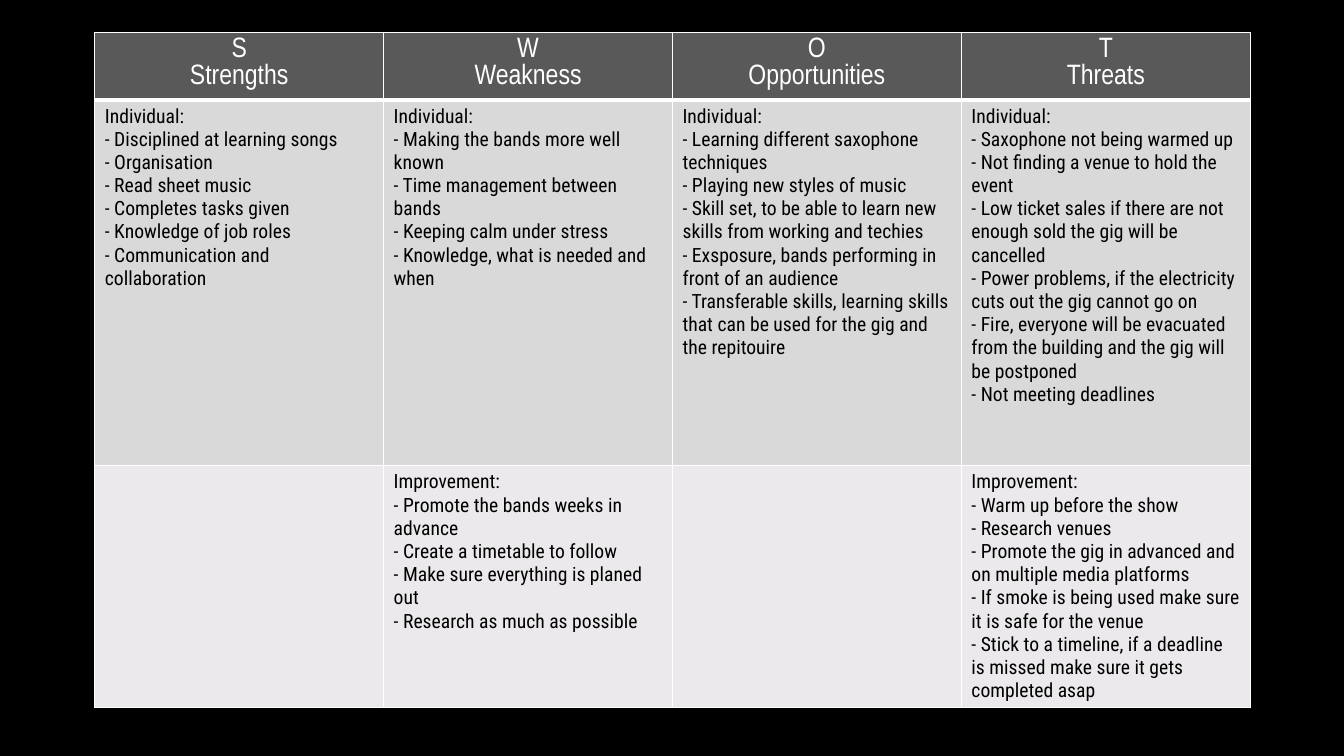
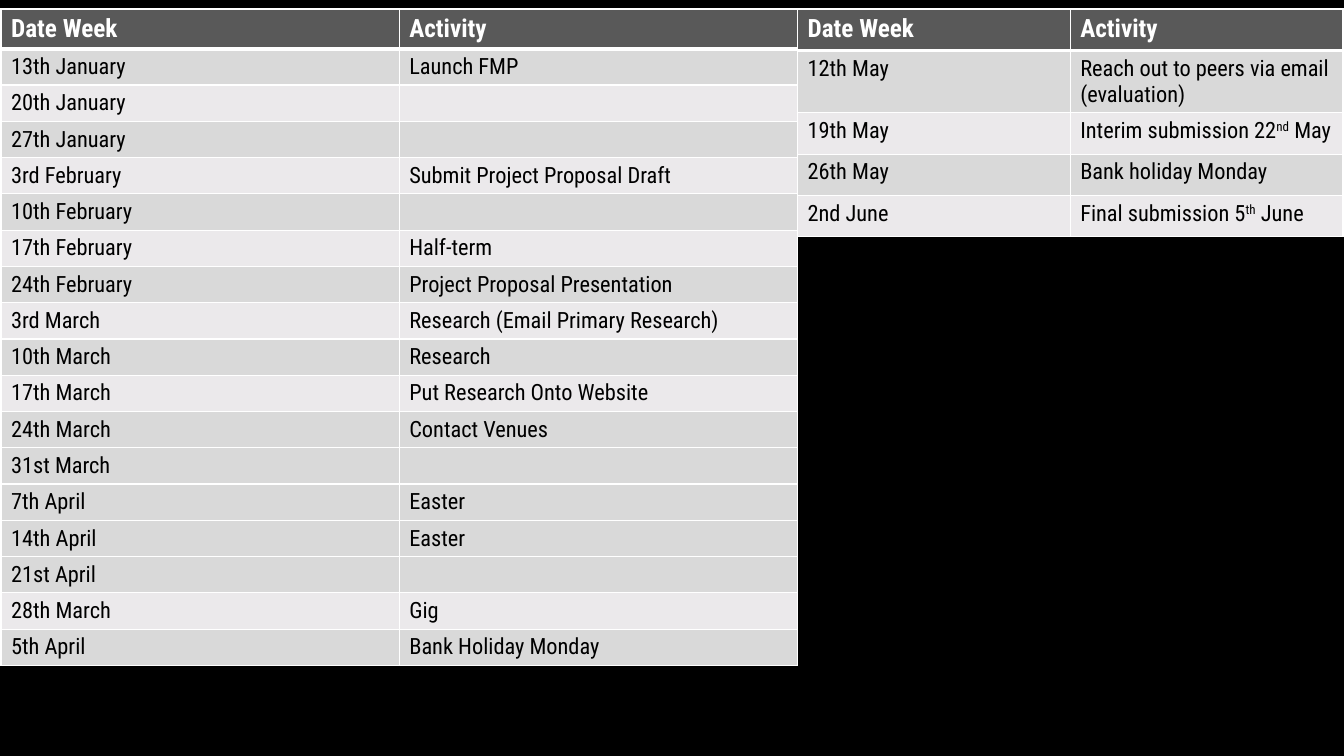
from lxml import etree
from pptx import Presentation
from pptx.dml.color import RGBColor
from pptx.enum import shapes, text
from pptx.oxml import ns
from pptx.util import Inches, Pt

BLACK = RGBColor(0x00, 0x00, 0x00)
WHITE = RGBColor(0xFF, 0xFF, 0xFF)
HEAD = RGBColor(0x59, 0x59, 0x59)
DARK = RGBColor(0xD9, 0xD9, 0xD9)
LIGHT = RGBColor(0xEB, 0xE9, 0xEB)
FONT = "Roboto Condensed"
NARROW = "Arial Narrow"
GRID = "{5940675A-B579-460E-94D1-54222C63F5DA}"
WIDE, HIGH = 13.33, 7.5

SWOT = [
    ["S\nStrengths", "W\nWeakness", "O\nOpportunities", "T\nThreats"],
    [
        """Individual:
- Disciplined at learning songs
- Organisation
- Read sheet music
- Completes tasks given
- Knowledge of job roles
- Communication and collaboration""",
        """Individual:
- Making the bands more well known
- Time management between bands
- Keeping calm under stress
- Knowledge, what is needed and when""",
        """Individual:
- Learning different saxophone techniques
- Playing new styles of music
- Skill set, to be able to learn new skills from working and techies
- Exsposure, bands performing in front of an audience
- Transferable skills, learning skills that can be used for the gig and the repitouire""",
        """Individual:
- Saxophone not being warmed up
- Not finding a venue to hold the event
- Low ticket sales if there are not enough sold the gig will be cancelled
- Power problems, if the electricity cuts out the gig cannot go on
- Fire, everyone will be evacuated from the building and the gig will be postponed
- Not meeting deadlines""",
    ],
    [
        "",
        """Improvement:
- Promote the bands weeks in advance
- Create a timetable to follow
- Make sure everything is planed out
- Research as much as possible""",
        "",
        """Improvement:
- Warm up before the show
- Research venues
- Promote the gig in advanced and on multiple media platforms
- If smoke is being used make sure it is safe for the venue
- Stick to a timeline, if a deadline is missed make sure it gets completed asap""",
    ],
]

TITLES = ["Date Week", "Activity"]
SPRING = [
    TITLES,
    ["13th January", "Launch FMP"],
    ["20th January", ""],
    ["27th January", ""],
    ["3rd February", "Submit Project Proposal Draft"],
    ["10th February", ""],
    ["17th February", "Half-term"],
    ["24th February", "Project Proposal Presentation"],
    ["3rd March", "Research (Email Primary Research)"],
    ["10th March", "Research"],
    ["17th March", "Put Research Onto Website"],
    ["24th March", "Contact Venues"],
    ["31st March", ""],
    ["7th April", "Easter"],
    ["14th April", "Easter"],
    ["21st April", ""],
    ["28th March", "Gig"],
    ["5th April", "Bank Holiday Monday"],
]
SUMMER = [
    TITLES,
    ["12th May", "Reach out to peers via email (evaluation)"],
    ["19th May", "Interim submission 22^nd^ May"],
    ["26th May", "Bank holiday Monday"],
    ["2nd June", "Final submission 5^th^ June"],
]


def add_page(prs):
    """Add a blank slide covered by the black backdrop."""
    slide = prs.slides.add_slide(prs.slide_layouts[6])
    back = slide.shapes.add_shape(shapes.MSO_SHAPE.RECTANGLE, 0, 0,
                                  prs.slide_width, prs.slide_height)
    back.shadow.inherit = False
    back.fill.solid()
    back.fill.fore_color.rgb = BLACK
    back.line.fill.background()
    return slide


def set_edges(cell, top, base):
    """Draw white cell borders, with top and base widths in points."""
    props = cell._tc.get_or_add_tcPr()
    widths = {"a:lnL": 1, "a:lnR": 1, "a:lnT": top, "a:lnB": base}
    for place, (tag, width) in enumerate(widths.items()):
        line = etree.Element(ns.qn(tag), w=str(Pt(width)))
        fill = etree.SubElement(line, ns.qn("a:solidFill"))
        etree.SubElement(fill, ns.qn("a:srgbClr"), val=str(WHITE))
        props.insert(place, line)


def write(cell, words, face, size, color, bold, align):
    """Fill a cell, one paragraph a line; ^ marks enclose superscripts."""
    frame = cell.text_frame
    for num, line in enumerate(words.split("\n")):
        para = frame.add_paragraph() if num else frame.paragraphs[0]
        para.alignment = align
        font = para.font
        font.name, font.size, font.bold = face, Pt(size), bold
        font.color.rgb = color
        if not line:
            end = etree.SubElement(para._p, ns.qn("a:endParaRPr"),
                                   sz=str(size * 100))
            etree.SubElement(end, ns.qn("a:latin"), typeface=face)
            continue
        for part, piece in enumerate(line.split("^")):
            run = para.add_run()
            run.text = piece
            if part % 2:
                run._r.get_or_add_rPr().set("baseline", "30000")


def add_grid(slide, box, rows, heights, head, size, extra=()):
    """Add a striped table; head is the header's font, size, bold and
    alignment, extra lists even rows that are dark too."""
    left, top, width = box
    count = len(rows[0])
    table = slide.shapes.add_table(
        len(rows), count, Inches(left), Inches(top), Inches(width),
        Inches(sum(heights))).table
    table.horz_banding = False
    table._tbl.tblPr.find(ns.qn("a:tableStyleId")).text = GRID
    for col in table.columns:
        col.width = Inches(width / count)
    face, big, bold, align = head
    for num, (row, height) in enumerate(zip(rows, heights)):
        table.rows[num].height = Inches(height)
        for col, words in enumerate(row):
            cell = table.cell(num, col)
            cell.fill.solid()
            if num == 0:
                cell.fill.fore_color.rgb = HEAD
                write(cell, words, face, big, WHITE, bold, align)
            else:
                dark = num % 2 or num in extra
                cell.fill.fore_color.rgb = DARK if dark else LIGHT
                write(cell, words, FONT, size, BLACK, False,
                      text.PP_ALIGN.LEFT)
            set_edges(cell, 3 if num == 1 else 1, 3 if num == 0 else 1)


def add_swot(prs):
    head = (NARROW, 20, False, text.PP_ALIGN.CENTER)
    add_grid(add_page(prs), (0.94, 0.32, 11.46), SWOT, [0.67, 3.63, 2.4],
             head, 14)


def add_plan(prs):
    slide = add_page(prs)
    head = (FONT, 18, True, text.PP_ALIGN.LEFT)
    add_grid(slide, (0.01, 0.09, 7.9), SPRING, [0.38] + [0.36] * 17,
             head, 16, extra=(12, 14))
    add_grid(slide, (7.91, 0.09, 5.41), SUMMER,
             [0.41, 0.62] + [0.41] * 3, head, 16)


def main():
    prs = Presentation()
    prs.slide_width, prs.slide_height = Inches(WIDE), Inches(HIGH)
    add_swot(prs)
    add_plan(prs)
    prs.save("out.pptx")


if __name__ == "__main__":
    main()
